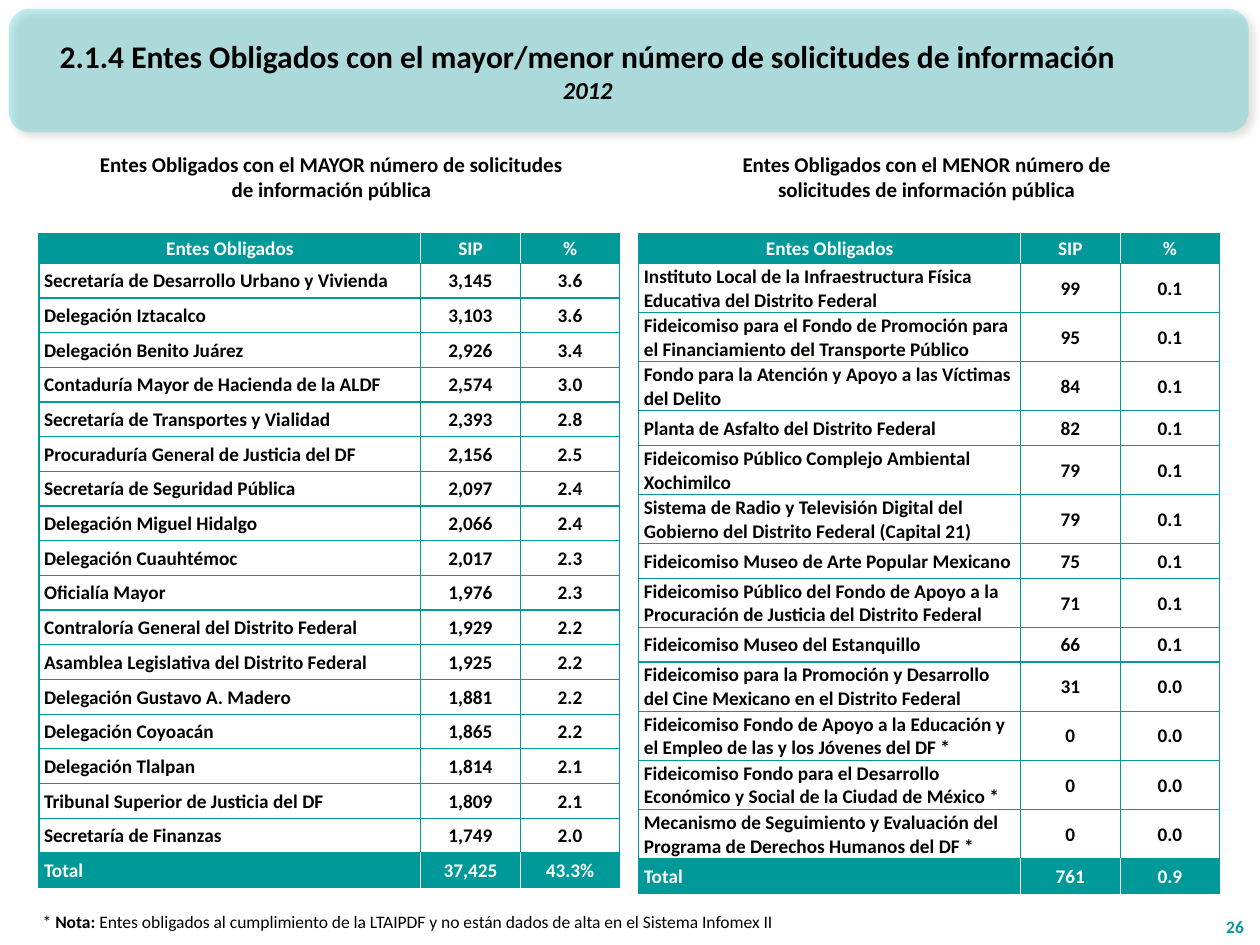
from lxml import etree
from pptx import Presentation
from pptx.dml.color import RGBColor
from pptx.enum.shapes import MSO_SHAPE
from pptx.enum.text import MSO_ANCHOR, PP_ALIGN
from pptx.oxml import parse_xml
from pptx.oxml.ns import nsdecls, qn
from pptx.util import Inches, Pt

LEFT, CENTER, RIGHT = PP_ALIGN.LEFT, PP_ALIGN.CENTER, PP_ALIGN.RIGHT
TOP, MIDDLE, BOTTOM = MSO_ANCHOR.TOP, MSO_ANCHOR.MIDDLE, MSO_ANCHOR.BOTTOM
TEAL = RGBColor(0x00, 0x99, 0x99)
AQUA = RGBColor(0x33, 0xCC, 0xCC)
WHITE = RGBColor(0xFF, 0xFF, 0xFF)
BLACK = RGBColor(0x00, 0x00, 0x00)
FONT = "Calibri"

# Content
TITLE = "2.1.4 Entes Obligados con el mayor/menor número de solicitudes de información"
YEAR = "2012"
PAGE = "26"
NOTE = ("* ", "Nota:", " Entes obligados al cumplimiento de la LTAIPDF y no están dados "
        "de alta en el Sistema Infomex II")
HEADER = ("Entes Obligados", "SIP", "%")
MOST_HEADING = "Entes Obligados con el MAYOR número de solicitudes de información pública"
MOST = [
    ("Secretaría de Desarrollo Urbano y Vivienda", "3,145", "3.6"),
    ("Delegación Iztacalco", "3,103", "3.6"),
    ("Delegación Benito Juárez", "2,926", "3.4"),
    ("Contaduría Mayor de Hacienda de la ALDF", "2,574", "3.0"),
    ("Secretaría de Transportes y Vialidad", "2,393", "2.8"),
    ("Procuraduría General de Justicia del DF", "2,156", "2.5"),
    ("Secretaría de Seguridad Pública", "2,097", "2.4"),
    ("Delegación Miguel Hidalgo", "2,066", "2.4"),
    ("Delegación Cuauhtémoc", "2,017", "2.3"),
    ("Oficialía Mayor", "1,976", "2.3"),
    ("Contraloría General del Distrito Federal", "1,929", "2.2"),
    ("Asamblea Legislativa del Distrito Federal", "1,925", "2.2"),
    ("Delegación Gustavo A. Madero", "1,881", "2.2"),
    ("Delegación Coyoacán", "1,865", "2.2"),
    ("Delegación Tlalpan", "1,814", "2.1"),
    ("Tribunal Superior de Justicia del DF", "1,809", "2.1"),
    ("Secretaría de Finanzas", "1,749", "2.0"),
    ("Total", "37,425", "43.3%"),
]
FEWEST_HEADING = "Entes Obligados con el MENOR número de solicitudes de información pública"
FEWEST = [
    ("Instituto Local de la Infraestructura Física Educativa del Distrito Federal", "99", "0.1"),
    ("Fideicomiso para el Fondo de Promoción para el Financiamiento del Transporte Público",
     "95", "0.1"),
    ("Fondo para la Atención y Apoyo a las Víctimas del Delito", "84", "0.1"),
    ("Planta de Asfalto del Distrito Federal", "82", "0.1"),
    ("Fideicomiso Público Complejo Ambiental Xochimilco", "79", "0.1"),
    ("Sistema de Radio y Televisión Digital del Gobierno del Distrito Federal (Capital 21)",
     "79", "0.1"),
    ("Fideicomiso Museo de Arte Popular Mexicano", "75", "0.1"),
    ("Fideicomiso Público del Fondo de Apoyo a la Procuración de Justicia del Distrito Federal",
     "71", "0.1"),
    ("Fideicomiso Museo del Estanquillo", "66", "0.1"),
    ("Fideicomiso para la Promoción y Desarrollo del Cine Mexicano en el Distrito Federal",
     "31", "0.0"),
    ("Fideicomiso Fondo de Apoyo a la Educación y el Empleo de las y los Jóvenes del DF *",
     "0", "0.0"),
    ("Fideicomiso Fondo para el Desarrollo Económico y Social de la Ciudad de México *",
     "0", "0.0"),
    ("Mecanismo de Seguimiento y Evaluación del Programa de Derechos Humanos del DF *",
     "0", "0.0"),
    ("Total", "761", "0.9"),
]

# Table measures, in inches
COLUMNS = (3.03, 0.79, 0.79)
TABLE_TOP = 1.85
HEADER_HEIGHT = 0.24
ONE_LINE = 4.96 / len(MOST)
TWO_LINES = 0.39
LINE_CHARS = 45


def box(left, top, width, height):
    return [Inches(value) for value in (left, top, width, height)]


def style(paragraph, size, color=BLACK, bold=True, align=LEFT):
    paragraph.alignment = align
    font = paragraph.font
    font.name, font.size, font.bold = FONT, Pt(size), bold
    font.color.rgb = color


def add_text(slide, place, text, size, color=BLACK, align=LEFT, anchor=TOP, bold=True):
    frame = slide.shapes.add_textbox(*box(*place)).text_frame
    frame.word_wrap = True
    frame.vertical_anchor = anchor
    paragraph = frame.paragraphs[0]
    paragraph.text = text
    style(paragraph, size, color, bold, align)
    return paragraph


def set_borders(cell, left, right):
    props = cell._tc.get_or_add_tcPr()
    sides = (("lnL", left), ("lnR", right), ("lnT", TEAL), ("lnB", TEAL))
    for position, (side, color) in enumerate(sides):
        props.insert(position, parse_xml(
            f'<a:{side} {nsdecls("a")} w="{Pt(0.75)}"><a:solidFill>'
            f'<a:srgbClr val="{color}"/></a:solidFill></a:{side}>'))


def add_ranking(slide, left, entries):
    rows = [HEADER, *entries]
    heights = [HEADER_HEIGHT] + [
        TWO_LINES if len(name) > LINE_CHARS else ONE_LINE for name, _, _ in entries]
    table = slide.shapes.add_table(len(rows), len(COLUMNS), *box(
        left, TABLE_TOP, sum(COLUMNS), sum(heights))).table
    for column, width in zip(table.columns, COLUMNS):
        column.width = Inches(width)
    last_row, last_column = len(rows) - 1, len(COLUMNS) - 1
    for r, (values, height) in enumerate(zip(rows, heights)):
        table.rows[r].height = Inches(height)
        banded = r in (0, last_row)
        for c, value in enumerate(values):
            is_name = c == 0 and r > 0
            cell = table.cell(r, c)
            cell.margin_left = Inches(0.04 if is_name else 0.01)
            cell.margin_top = cell.margin_right = Inches(0.01)
            cell.margin_bottom = 0
            cell.vertical_anchor = MIDDLE
            cell.fill.solid()
            cell.fill.fore_color.rgb = TEAL if banded else WHITE
            inner = WHITE if banded else TEAL
            set_borders(cell, inner if c > 0 else TEAL, inner if c < last_column else TEAL)
            paragraph = cell.text_frame.paragraphs[0]
            paragraph.text = value
            style(paragraph, 11, WHITE if banded else BLACK, align=LEFT if is_name else CENTER)


def add_banner(slide):
    banner = slide.shapes.add_shape(MSO_SHAPE.ROUNDED_RECTANGLE, *box(0.07, 0.07, 9.84, 0.98))
    banner.fill.solid()
    banner.fill.fore_color.rgb = AQUA
    banner.line.fill.background()
    props = banner._element.spPr
    color = props.find(qn("a:solidFill")).find(qn("a:srgbClr"))
    etree.SubElement(color, qn("a:alpha"), val="30000")
    props.append(parse_xml(
        f'<a:effectLst {nsdecls("a")}><a:outerShdw blurRad="{Pt(4)}" dist="{Pt(3)}" '
        'dir="2700000" algn="tl" rotWithShape="0"><a:srgbClr val="000000">'
        '<a:alpha val="40000"/></a:srgbClr></a:outerShdw></a:effectLst>'))
    # Send the banner behind the title
    slide.shapes._spTree.insert(2, banner._element)


def main():
    deck = Presentation()
    deck.slide_width, deck.slide_height = Inches(10), Inches(7.5)
    slide = deck.slides.add_slide(deck.slide_layouts[5])

    # Banner and title
    add_banner(slide)
    title = slide.shapes.title
    title.left, title.top, title.width, title.height = box(0.08, 0.09, 9.17, 0.94)
    title.text_frame.text = f"{TITLE}\n{YEAR}"
    title.text_frame.vertical_anchor = MIDDLE
    heading, year = title.text_frame.paragraphs
    style(heading, 18, align=CENTER)
    style(year, 14, align=CENTER)
    year.font.italic = True

    # Two rankings with their headings
    add_text(slide, (0.64, 1.15, 3.98, 0.5), MOST_HEADING, 12, align=CENTER)
    add_text(slide, (5.49, 1.15, 3.73, 0.5), FEWEST_HEADING, 12, align=CENTER)
    add_ranking(slide, 0.31, MOST)
    add_ranking(slide, 5.07, FEWEST)

    # Note and page number
    mark, label, explanation = NOTE
    note = add_text(slide, (0.24, 7.18, 9.61, 0.27), mark, 10, bold=False)
    label_run = note.add_run()
    label_run.text = label
    label_run.font.bold = True
    note.add_run().text = explanation
    add_text(slide, (9.57, 7.09, 0.4, 0.4), PAGE, 10, TEAL, RIGHT, BOTTOM)

    deck.save("out.pptx")


if __name__ == "__main__":
    main()
